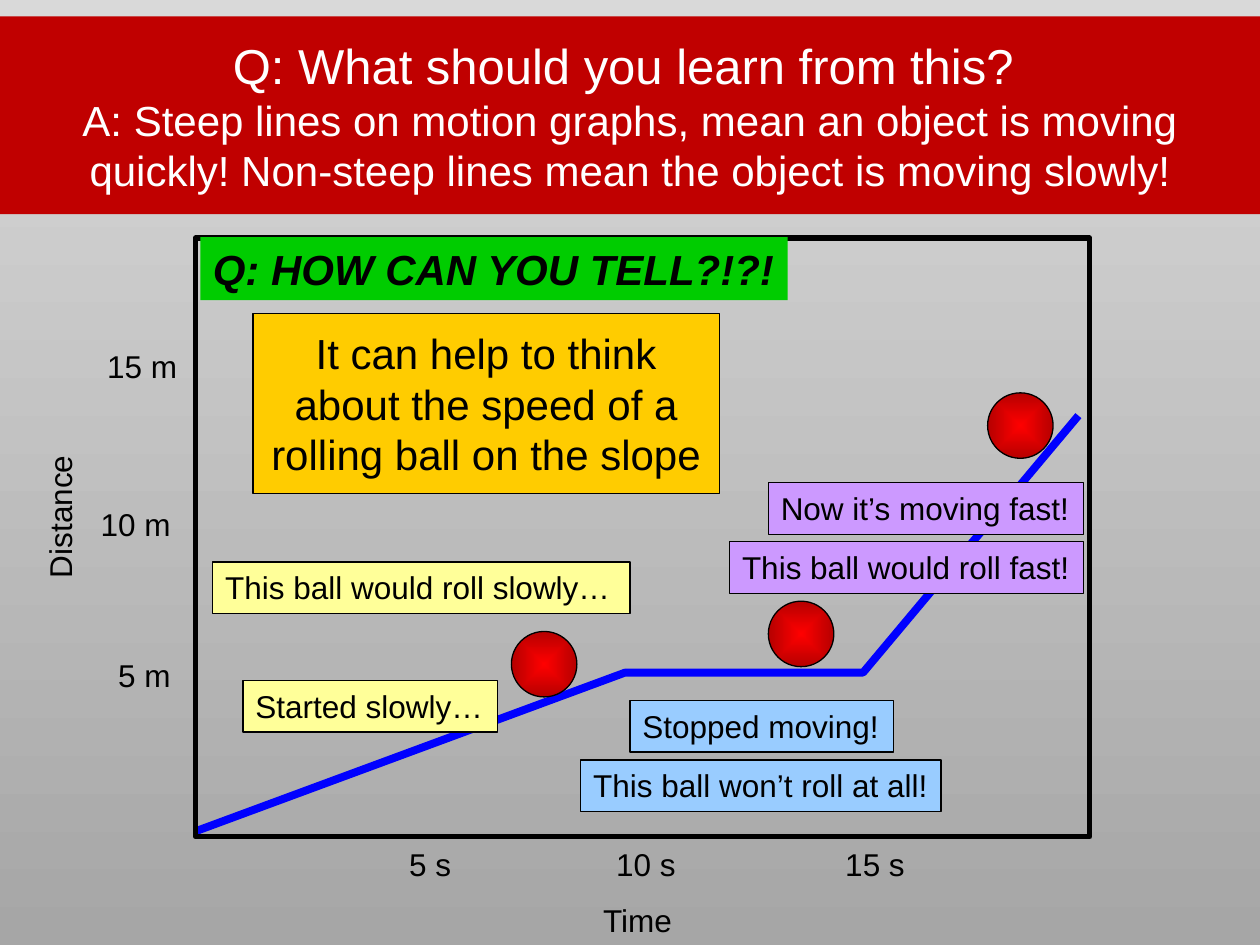
from lxml import etree
from pptx import Presentation
from pptx.dml.color import RGBColor
from pptx.enum.shapes import MSO_SHAPE
from pptx.enum.text import MSO_ANCHOR, MSO_AUTO_SIZE, PP_ALIGN
from pptx.oxml.ns import qn
from pptx.util import Cm, Pt

BLACK, RED, BLUE = "000000", "C00000", "0000FF"
SKY, LEMON, LILAC = "99CCFF", "FFFF99", "CC99FF"


def rgb(code):
    return RGBColor.from_string(code)


def write(frame, text, size=18, color=BLACK, bold=False, italic=False, align=None):
    """Add a run to the first paragraph of the frame."""
    para = frame.paragraphs[0]
    if align is not None:
        para.alignment = align
    run = para.add_run()
    run.text = text
    font = run.font
    font.name, font.size = "Arial", Pt(size)
    font.bold, font.italic = bold, italic
    font.color.rgb = rgb(color)


def blend(fill, start, end):
    fill.gradient()
    for stop, code in zip(fill.gradient_stops, (start, end)):
        stop.color.rgb = rgb(code)


def add_form(slide, kind, box, fill=None, line=None, width=0.75):
    form = slide.shapes.add_shape(kind, *map(Cm, box))
    form.shadow.inherit = False
    if fill:
        form.fill.solid()
        form.fill.fore_color.rgb = rgb(fill)
    else:
        form.fill.background()
    if line:
        form.line.color.rgb = rgb(line)
        form.line.width = Pt(width)
    else:
        form.line.fill.background()
    return form


def add_label(slide, text, x, y, w, turn=0):
    label = slide.shapes.add_textbox(Cm(x), Cm(y), Cm(w), Cm(1.02))
    label.rotation = turn
    label.text_frame.word_wrap = False
    label.text_frame.auto_size = MSO_AUTO_SIZE.SHAPE_TO_FIT_TEXT
    write(label.text_frame, text)


def add_tag(slide, text, box, fill, line=BLACK, wrap=False, **style):
    """Add a filled box that fits its one line of text."""
    frame = add_form(slide, MSO_SHAPE.RECTANGLE, box, fill, line).text_frame
    frame.word_wrap = wrap
    frame.auto_size = MSO_AUTO_SIZE.SHAPE_TO_FIT_TEXT
    frame.vertical_anchor = MSO_ANCHOR.TOP
    write(frame, text, align=PP_ALIGN.LEFT, **style)


def add_panel(slide, box, fill, line=None):
    """Add a box for centred text and return its frame."""
    frame = add_form(slide, MSO_SHAPE.RECTANGLE, box, fill, line).text_frame
    frame.word_wrap = True
    frame.vertical_anchor = MSO_ANCHOR.MIDDLE
    return frame


def add_ball(slide, x, y):
    ball = add_form(slide, MSO_SHAPE.OVAL, (x, y, 1.32, 1.32), line=BLACK)
    blend(ball.fill, "FF0000", "B60000")
    grad = ball.fill._xPr.find(qn("a:gradFill"))
    lin = grad.find(qn("a:lin"))
    path = etree.Element(qn("a:path"), path="shape")
    etree.SubElement(path, qn("a:fillToRect"), l="50000", t="50000", r="50000", b="50000")
    grad.replace(lin, path)


def add_curve(slide, points):
    first, *rest = [(Cm(x), Cm(y)) for x, y in points]
    maker = slide.shapes.build_freeform(*first)
    maker.add_line_segments(rest, close=False)
    curve = maker.convert_to_shape()
    curve.shadow.inherit = False
    curve.fill.background()
    curve.line.color.rgb = rgb(BLUE)
    curve.line.width = Pt(4.5)


def main():
    deck = Presentation()
    deck.slide_width, deck.slide_height = Cm(25.4), Cm(19.05)
    slide = deck.slides.add_slide(deck.slide_layouts[6])
    back = slide.background.fill
    blend(back, "D9D9D9", "A6A6A6")
    back.gradient_angle = 270

    add_curve(slide, [(3.94, 16.76), (12.6, 13.56), (17.4, 13.56), (21.74, 8.38)])
    for text, x, y, w in [
        ("5 m", 2.13, 13.11, 1.57),
        ("15 m", 1.91, 6.88, 1.93),
        ("10 m", 1.78, 10.06, 1.93),
        ("15 s", 16.79, 16.92, 1.7),
        ("10 s", 12.17, 16.92, 1.7),
        ("5 s", 8, 16.92, 1.35),
    ]:
        add_label(slide, text, x, y, w)
    add_form(slide, MSO_SHAPE.RECTANGLE, (3.94, 4.8, 18.03, 12.07), line=BLACK, width=3)

    hint = add_panel(slide, (5.1, 6.32, 9.4, 3.63), "FFCC00", BLACK)
    write(hint, "It can help to think about the speed of a rolling ball on the slope",
          size=24, align=PP_ALIGN.CENTER)
    for x, y in [(19.91, 7.92), (10.31, 12.73), (15.49, 12.12)]:
        add_ball(slide, x, y)
    add_label(slide, "Distance", -0.28, 9.91, 2.97, turn=270)
    add_label(slide, "Time", 11.91, 18.03, 1.93)

    high = 1.04
    add_tag(slide, "Stopped moving!", (12.7, 14.12, 5.31, high), SKY)
    add_tag(slide, "Started slowly…", (4.9, 13.72, 5.13, high), LEMON)
    add_tag(slide, "Now it’s moving fast!", (15.49, 9.73, 6.35, high), LILAC)
    add_tag(slide, "Q: HOW CAN YOU TELL?!?!", (4.04, 4.78, 11.84, 1.27), "00CC00",
            line=None, size=24, bold=True, italic=True)
    add_tag(slide, "This ball would roll slowly…", (4.29, 11.33, 8.41, high), LEMON, wrap=True)
    add_tag(slide, "This ball won’t roll at all!", (11.71, 15.32, 7.26, high), SKY)
    add_tag(slide, "This ball would roll fast!", (14.71, 10.92, 7.14, high), LILAC)

    head = add_panel(slide, (0, 0.33, 25.4, 3.99), RED)
    write(head, "Q: What should you learn from this? ", size=28, color="FFFFFF",
          align=PP_ALIGN.CENTER)
    head.paragraphs[0].add_line_break()
    write(head, "A: Steep lines on motion graphs, mean an object is moving quickly! "
          "Non-steep lines mean the object is moving slowly!", size=24, color="FFFFFF")
    deck.save("out.pptx")


if __name__ == "__main__":
    main()
